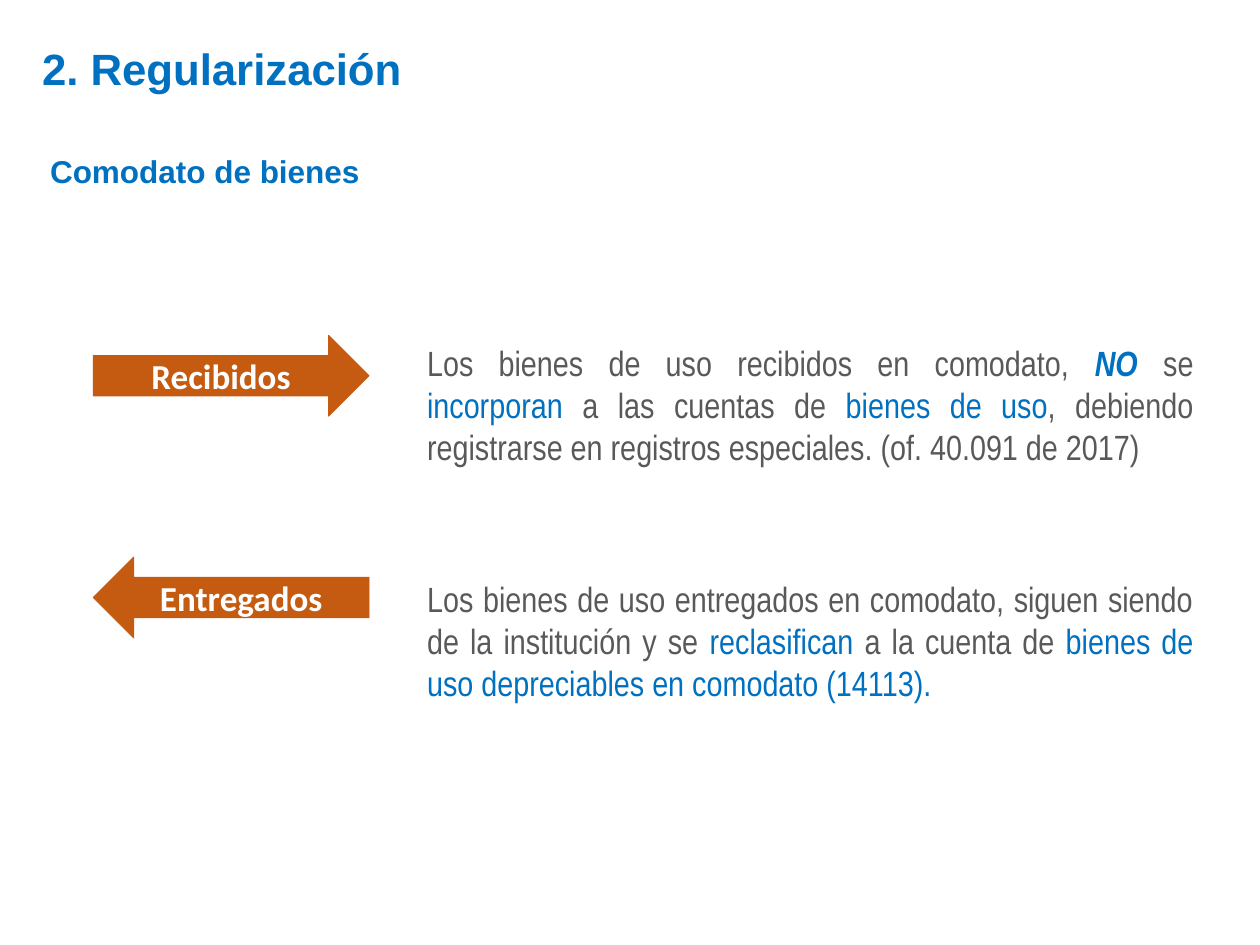
from dataclasses import dataclass

from pptx import Presentation
from pptx.dml.color import RGBColor
from pptx.enum.shapes import MSO_SHAPE
from pptx.enum.text import MSO_ANCHOR, MSO_AUTO_SIZE, PP_ALIGN
from pptx.util import Cm, Pt


@dataclass(frozen=True)
class Theme:
    blue: str = "0070C0"
    gray: str = "595959"
    orange: str = "C55A11"
    white: str = "FFFFFF"
    heading_font: str = "Arial"
    body_font: str = "Arial Narrow"
    label_font: str = "Calibri"
    title_size: int = 25
    subtitle_size: int = 18
    body_size: int = 20
    outline: float = 0.5


THEME = Theme()

ARROW_LEFT, ARROW_WIDTH, ARROW_HEIGHT = 1.88, 5.56, 1.63
BODY_LEFT, BODY_WIDTH, BODY_HEIGHT = 8.36, 15.95, 2.82

# Each row: arrow shape, label, arrow top, text top, and (text, highlighted, strong) spans
ROWS = [
    (MSO_SHAPE.RIGHT_ARROW, "Recibidos", 6.76, 6.76, [
        ("Los bienes de uso recibidos en comodato, ", False, False),
        ("NO ", True, True),
        ("se ", False, False),
        ("incorporan", True, False),
        (" a las cuentas de ", False, False),
        ("bienes de uso", True, False),
        (", debiendo registrarse en registros especiales. (of. 40.091 de 2017)",
         False, False),
    ]),
    (MSO_SHAPE.LEFT_ARROW, "Entregados", 11.23, 11.51, [
        ("Los bienes de uso entregados en comodato, siguen siendo de la "
         "institución y se ", False, False),
        ("reclasifican", True, False),
        (" a la cuenta de ", False, False),
        ("bienes de uso depreciables en comodato (14113).", True, False),
    ]),
]


def add_span(para, text, *, font, size, color, bold=False, italic=False):
    span = para.add_run()
    span.text = text
    span.font.name = font
    span.font.size = Pt(size)
    span.font.color.rgb = RGBColor.from_string(color)
    span.font.bold = bold
    span.font.italic = italic


def start_text(box, align, anchor):
    """Prepare the frame of a box and return its first paragraph."""
    frame = box.text_frame
    frame.word_wrap = True
    frame.vertical_anchor = anchor
    para = frame.paragraphs[0]
    para.alignment = align
    return para


def add_title(page, text):
    box = page.shapes.add_shape(
        MSO_SHAPE.ROUNDED_RECTANGLE, Cm(0.56), Cm(0.97), Cm(17.22), Cm(0.81))
    box.shadow.inherit = False
    box.fill.background()
    box.line.fill.background()
    para = start_text(box, PP_ALIGN.LEFT, MSO_ANCHOR.MIDDLE)
    add_span(para, text, font=THEME.heading_font, size=THEME.title_size,
             color=THEME.blue, bold=True)


def add_subtitle(page, text):
    box = page.shapes.add_textbox(Cm(0.76), Cm(2.97), Cm(9.14), Cm(0.97))
    para = start_text(box, PP_ALIGN.LEFT, MSO_ANCHOR.MIDDLE)
    add_span(para, text, font=THEME.heading_font, size=THEME.subtitle_size,
             color=THEME.blue, bold=True)


def add_arrow(page, kind, label, top):
    arrow = page.shapes.add_shape(
        kind, Cm(ARROW_LEFT), Cm(top), Cm(ARROW_WIDTH), Cm(ARROW_HEIGHT))
    arrow.shadow.inherit = False
    orange = RGBColor.from_string(THEME.orange)
    arrow.fill.solid()
    arrow.fill.fore_color.rgb = orange
    arrow.line.color.rgb = orange
    arrow.line.width = Pt(THEME.outline)
    para = start_text(arrow, PP_ALIGN.CENTER, MSO_ANCHOR.MIDDLE)
    add_span(para, label, font=THEME.label_font, size=THEME.body_size,
             color=THEME.white, bold=True)


def add_body(page, spans, top):
    box = page.shapes.add_textbox(
        Cm(BODY_LEFT), Cm(top), Cm(BODY_WIDTH), Cm(BODY_HEIGHT))
    para = start_text(box, PP_ALIGN.JUSTIFY, MSO_ANCHOR.TOP)
    box.text_frame.auto_size = MSO_AUTO_SIZE.SHAPE_TO_FIT_TEXT
    for text, highlighted, strong in spans:
        add_span(para, text, font=THEME.body_font, size=THEME.body_size,
                 color=THEME.blue if highlighted else THEME.gray,
                 bold=strong, italic=strong)


def main():
    deck = Presentation()
    deck.slide_width, deck.slide_height = Cm(25.4), Cm(19.05)
    page = deck.slides.add_slide(deck.slide_layouts[6])
    add_title(page, "2. Regularización")
    add_subtitle(page, "Comodato de bienes")
    for kind, label, arrow_top, body_top, spans in ROWS:
        add_arrow(page, kind, label, arrow_top)
        add_body(page, spans, body_top)
    deck.save("out.pptx")


if __name__ == "__main__":
    main()
